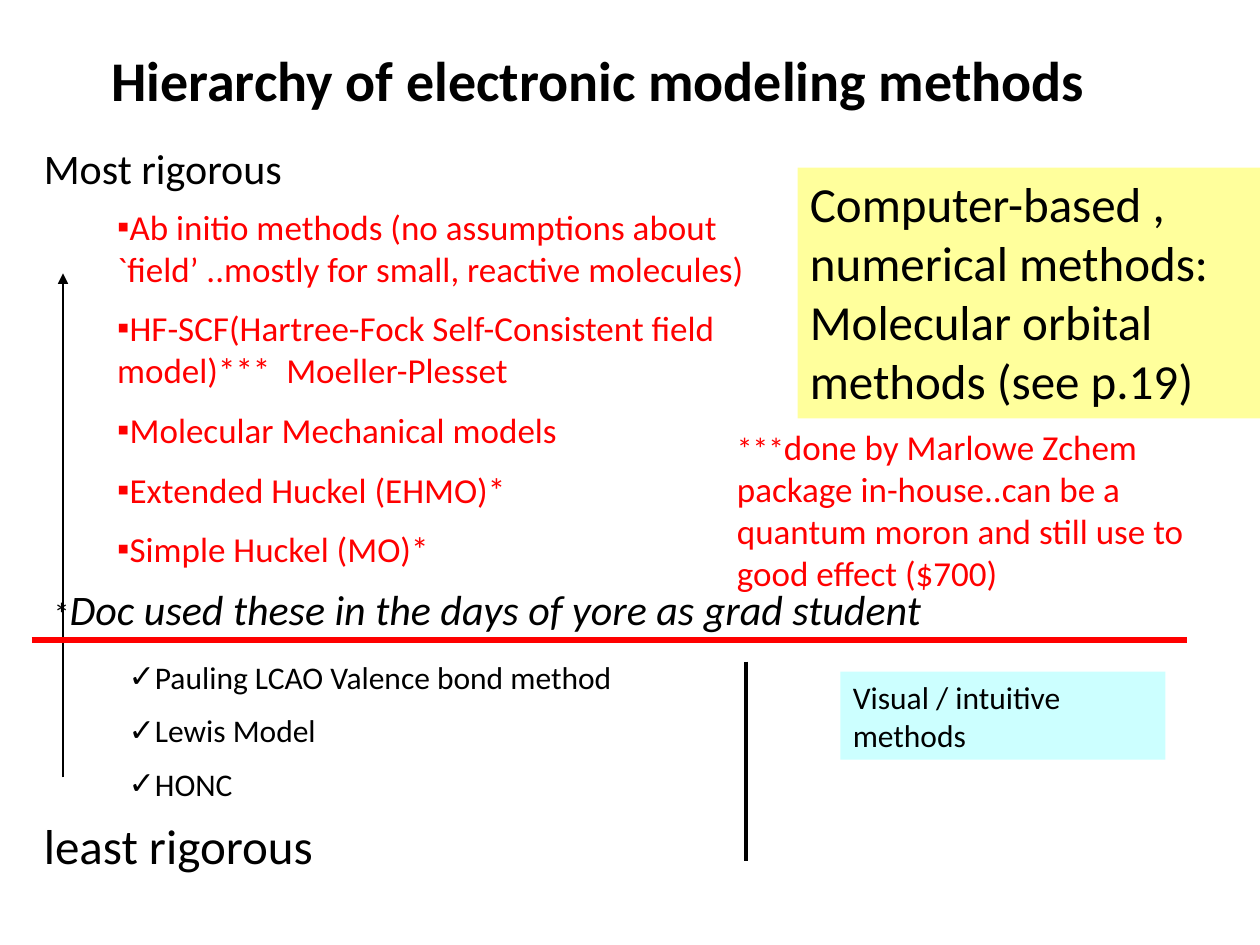
"""Build a slide ranking electronic modeling methods by rigor."""
from lxml.etree import SubElement
from pptx import Presentation
from pptx.dml.color import RGBColor as Rgb
from pptx.enum.shapes import MSO_CONNECTOR as Connector
from pptx.enum.text import MSO_ANCHOR as Anchor, MSO_AUTO_SIZE as AutoSize, PP_ALIGN as Align
from pptx.oxml.ns import qn
from pptx.util import Inches, Pt

THEME = {
    "font": "Calibri", "black": "000000", "red": "FF0000", "white": "FFFFFF",
    "yellow": "FFFF00", "cyan": "CCFFFF",
    "title": 32, "large": 28, "medium": 24, "normal": 20, "small": 18,
}

TITLE = ("Hierarchy of electronic modeling methods", (0, 0, 9.5, 1.25))

METHOD_LISTS = [
    {"box": (0.83, 1.58, 5.5, 3.58), "bullet": "▪", "size": "normal", "color": "red", "fill": "white",
     "methods": ["Ab initio methods (no assumptions about `field’ ..mostly for small, reactive molecules)",
                 "HF-SCF(Hartree-Fock Self-Consistent field model)***  Moeller-Plesset",
                 "Molecular Mechanical models",
                 "Extended Huckel (EHMO)*",
                 "Simple Huckel (MO)*"]},
    {"box": (0.92, 5.17, 5.42, 1.3), "bullet": "✓", "size": "small", "color": "black", "fill": None,
     "methods": ["Pauling LCAO Valence bond method", "Lewis Model", "HONC"]},
]

NOTES = [
    {"box": (6.67, 5.33, 2.58, 0.7), "color": "black", "fill": "cyan",
     "lines": [[("Visual / intuitive methods", "small", False)]]},
    {"box": (0.25, 1.08, 3.5, 0.5), "color": "black",
     "lines": [[("Most rigorous", "medium", False)]]},
    {"box": (0.25, 6.42, 3.08, 0.57), "color": "black",
     "lines": [[("least rigorous", "large", False)]]},
    {"box": (0.33, 4.58, 7.75, 0.5), "color": "black",
     "lines": [[("*", "small", False),
                ("Doc used these in the days of yore as grad student", "medium", True)]]},
    {"box": (5.75, 3.33, 4.08, 1.45), "color": "red",
     "lines": [[("***", "small", False),
                ("done by Marlowe Zchem package in-house..can be a quantum moron "
                 "and still use to good effect ($700)", "normal", False)]]},
    {"box": (6.33, 1.33, 3.67, 1.99), "color": "black", "fill": "yellow", "opacity": 39,
     "lines": [[("Computer-based , numerical methods:", "large", False)],
               [("Molecular orbital methods (see p.19)", "large", False)]]},
]

RULES = [
    {"start": (0.5, 6.17), "end": (0.5, 2.17), "color": "black", "width": 0.75, "arrow": True},
    {"start": (0.25, 5.08), "end": (9.42, 5.08), "color": "red", "width": 3.75},
    {"start": (5.92, 5.25), "end": (5.92, 6.83), "color": "black", "width": 2.5},
]


def color_of(name):
    return Rgb.from_string(THEME[name])


def place(shape, box):
    shape.left, shape.top, shape.width, shape.height = map(Inches, box)


def fill_with(shape, name, opacity=100):
    if name is None:
        return
    shape.fill.solid()
    shape.fill.fore_color.rgb = color_of(name)
    if opacity < 100:
        tint = shape.fill._xPr.find(qn("a:solidFill"))[0]
        SubElement(tint, qn("a:alpha"), val=str(opacity * 1000))


def add_run(paragraph, words, size, color, bold=False, italic=False):
    run = paragraph.add_run()
    run.text = words
    font = run.font
    font.name, font.size = THEME["font"], Pt(THEME[size])
    font.bold, font.italic = bold, italic
    font.color.rgb = color_of(color)


def paragraphs_for(frame, items):
    for index, item in enumerate(items):
        yield (frame.add_paragraph() if index else frame.paragraphs[0]), item


def set_frame(frame, anchor=Anchor.TOP):
    frame.word_wrap = True
    frame.auto_size = AutoSize.NONE
    frame.vertical_anchor = anchor


def add_title(slide):
    words, box = TITLE
    title = slide.shapes.title
    place(title, box)
    set_frame(title.text_frame, Anchor.MIDDLE)
    heading = title.text_frame.paragraphs[0]
    heading.alignment = Align.CENTER
    add_run(heading, words, "title", "black", bold=True)


def fill_list(body, group):
    place(body, group["box"])
    fill_with(body, group["fill"])
    set_frame(body.text_frame)
    for index, (paragraph, method) in enumerate(paragraphs_for(body.text_frame, group["methods"])):
        paragraph.space_before = Pt(THEME[group["size"]] / 2 if index else 0)
        props = paragraph._p.get_or_add_pPr()
        props.set("marL", "0")
        props.set("indent", "0")
        SubElement(props, qn("a:buChar"), char=group["bullet"])
        add_run(paragraph, method, group["size"], group["color"])


def add_note(slide, note):
    box = slide.shapes.add_textbox(*map(Inches, note["box"]))
    fill_with(box, note.get("fill"), note.get("opacity", 100))
    set_frame(box.text_frame)
    for paragraph, line in paragraphs_for(box.text_frame, note["lines"]):
        for words, size, italic in line:
            add_run(paragraph, words, size, note["color"], italic=italic)


def add_rule(slide, rule):
    ends = map(Inches, rule["start"] + rule["end"])
    connector = slide.shapes.add_connector(Connector.STRAIGHT, *ends)
    connector.line.color.rgb = color_of(rule["color"])
    connector.line.width = Pt(rule["width"])
    if rule.get("arrow"):
        SubElement(connector.line._get_or_add_ln(), qn("a:tailEnd"), type="triangle")
    SubElement(connector._element.spPr, qn("a:effectLst"))


def main():
    deck = Presentation()
    deck.slide_width, deck.slide_height = Inches(10), Inches(7.5)
    slide = deck.slides.add_slide(deck.slide_layouts.get_by_name("Two Content"))
    add_title(slide)
    bodies = [slide.placeholders[1], slide.placeholders[2]]
    for body, group in zip(bodies, METHOD_LISTS):
        fill_list(body, group)
    for note in NOTES:
        add_note(slide, note)
    for rule in RULES:
        add_rule(slide, rule)
    deck.save("out.pptx")


if __name__ == "__main__":
    main()
